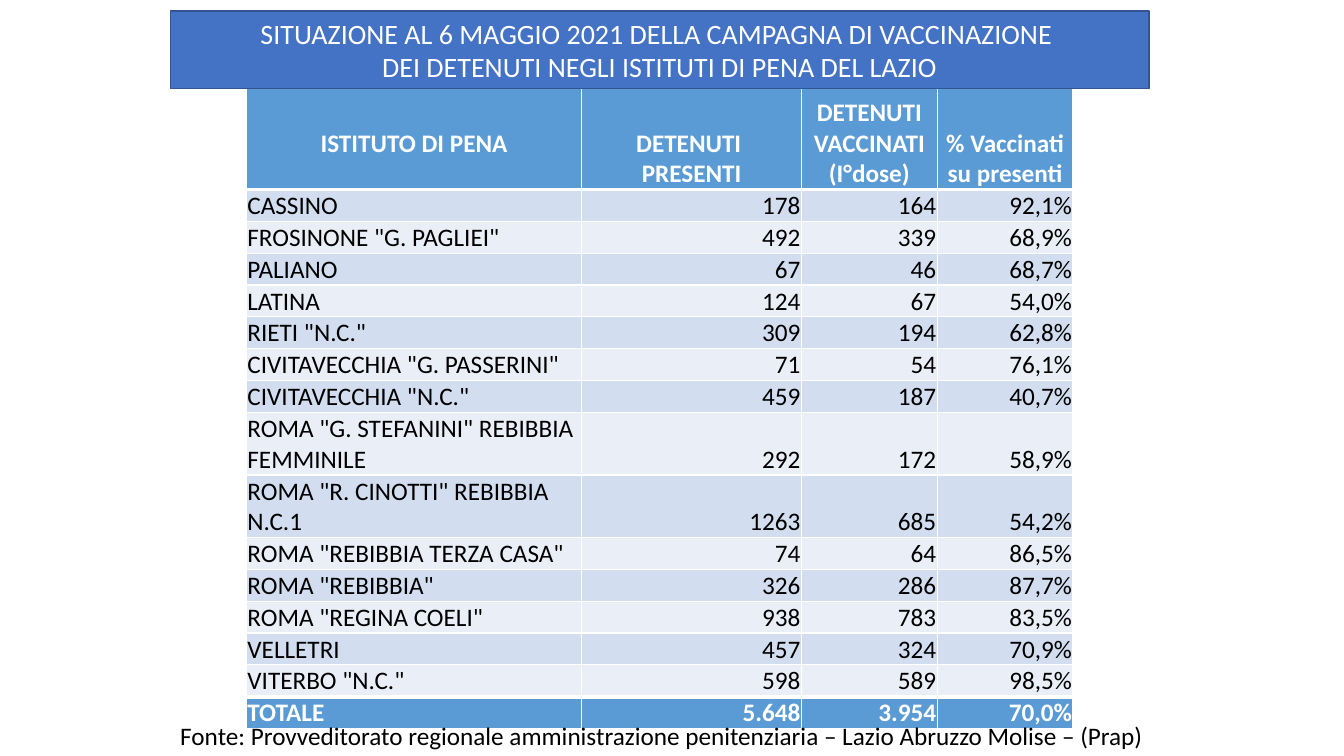
"""Build the slide on the vaccination of detainees in the prisons of Lazio."""
import dataclasses

import lxml.etree
import pptx
import pptx.dml.color
import pptx.enum.shapes
import pptx.enum.text
import pptx.oxml.ns
import pptx.util

Pt = pptx.util.Pt
ALIGN = pptx.enum.text.PP_ALIGN
ANCHOR = pptx.enum.text.MSO_ANCHOR

COLORS = {
    "title": "4472C4",
    "title_line": "325491",
    "header": "5B9BD5",
    "odd": "D2DEEF",
    "even": "EAEFF7",
    "white": "FFFFFF",
    "black": "000000",
}
FONT = "Calibri"
COLUMN_WIDTHS = (239.5, 157, 97, 97)
HEADER_HEIGHT = 72
ROW_HEIGHT = 14.4
LINE_HEIGHT = 22
CELL_MARGIN = 0.75
THIN, THICK = 1, 3


@dataclasses.dataclass
class Prison:
    name: str
    present: str
    vaccinated: str
    share: str


@dataclasses.dataclass
class CellStyle:
    fill: str
    color: str
    bold: bool
    top: float = THIN
    bottom: float = THIN


HEADINGS = ("ISTITUTO DI PENA", "DETENUTI \nPRESENTI",
            "DETENUTI VACCINATI (I°dose)", "% Vaccinati su presenti")
PRISONS = [
    Prison("CASSINO", "178", "164", "92,1%"),
    Prison('FROSINONE "G. PAGLIEI"', "492", "339", "68,9%"),
    Prison("PALIANO", "67", "46", "68,7%"),
    Prison("LATINA", "124", "67", "54,0%"),
    Prison('RIETI "N.C."', "309", "194", "62,8%"),
    Prison('CIVITAVECCHIA "G. PASSERINI"', "71", "54", "76,1%"),
    Prison('CIVITAVECCHIA "N.C."', "459", "187", "40,7%"),
    Prison('ROMA "G. STEFANINI" REBIBBIA FEMMINILE', "292", "172", "58,9%"),
    Prison('ROMA "R. CINOTTI" REBIBBIA N.C.1', "1263", "685", "54,2%"),
    Prison('ROMA "REBIBBIA TERZA CASA"', "74", "64", "86,5%"),
    Prison('ROMA "REBIBBIA"', "326", "286", "87,7%"),
    Prison('ROMA "REGINA COELI"', "938", "783", "83,5%"),
    Prison("VELLETRI", "457", "324", "70,9%"),
    Prison('VITERBO "N.C."', "598", "589", "98,5%"),
]
TOTAL = Prison("TOTALE", "5.648", "3.954", "70,0%")


def rgb(name: str) -> pptx.dml.color.RGBColor:
    return pptx.dml.color.RGBColor.from_string(COLORS[name])


def write(frame, text: str, size: float, color: str, align, bold: bool = False) -> None:
    frame.text = text
    for para in frame.paragraphs:
        para.alignment = align
        for span in para.runs:
            span.font.name = FONT
            span.font.size = Pt(size)
            span.font.bold = bold
            span.font.color.rgb = rgb(color)


def add_borders(cell, top: float, bottom: float) -> None:
    properties = cell._tc.get_or_add_tcPr()
    sides = {"lnL": THIN, "lnR": THIN, "lnT": top, "lnB": bottom}
    for position, (side, width) in enumerate(sides.items()):
        line = lxml.etree.Element(pptx.oxml.ns.qn(f"a:{side}"), w=str(Pt(width)))
        fill = lxml.etree.SubElement(line, pptx.oxml.ns.qn("a:solidFill"))
        lxml.etree.SubElement(fill, pptx.oxml.ns.qn("a:srgbClr"), val=COLORS["white"])
        properties.insert(position, line)


def fill_cell(cell, text: str, style: CellStyle, align) -> None:
    write(cell.text_frame, text, 18, style.color, align, style.bold)
    cell.vertical_anchor = ANCHOR.BOTTOM
    cell.margin_left = cell.margin_right = cell.margin_top = Pt(CELL_MARGIN)
    cell.margin_bottom = 0
    cell.fill.solid()
    cell.fill.fore_color.rgb = rgb(style.fill)
    add_borders(cell, style.top, style.bottom)


def add_prison_table(page) -> None:
    rows = [(HEADINGS, CellStyle("header", "white", True, bottom=THICK))]
    for index, prison in enumerate(PRISONS):
        style = CellStyle("even" if index % 2 else "odd", "black", False)
        rows.append((dataclasses.astuple(prison), style))
    rows[1][1].top = rows[-1][1].bottom = THICK
    rows.append((dataclasses.astuple(TOTAL), CellStyle("header", "white", True, top=THICK)))

    height = HEADER_HEIGHT + ROW_HEIGHT * (len(rows) - 1)
    table = page.shapes.add_table(
        len(rows), len(COLUMN_WIDTHS), Pt(176), Pt(63.4),
        Pt(sum(COLUMN_WIDTHS)), Pt(height)).table
    table.first_row = table.horz_banding = False
    for column, width in zip(table.columns, COLUMN_WIDTHS):
        column.width = Pt(width)
    for row_index, (texts, style) in enumerate(rows):
        table.rows[row_index].height = Pt(ROW_HEIGHT if row_index else HEADER_HEIGHT)
        for column_index, text in enumerate(texts):
            if row_index == 0:
                align = ALIGN.CENTER
            else:
                align = ALIGN.RIGHT if column_index else ALIGN.LEFT
            fill_cell(table.cell(row_index, column_index), text, style, align)
    table.cell(0, 0).margin_bottom = Pt(LINE_HEIGHT)


def add_title(page) -> None:
    box = page.shapes.add_shape(
        pptx.enum.shapes.MSO_SHAPE.RECTANGLE, Pt(121.7), Pt(7.9), Pt(699), Pt(55.5))
    box.shadow.inherit = False
    box.fill.solid()
    box.fill.fore_color.rgb = rgb("title")
    box.line.color.rgb = rgb("title_line")
    box.line.width = Pt(1)
    box.text_frame.word_wrap = True
    box.text_frame.vertical_anchor = ANCHOR.MIDDLE
    write(box.text_frame,
          "SITUAZIONE AL 6 MAGGIO 2021 DELLA CAMPAGNA DI VACCINAZIONE \n"
          "DEI DETENUTI NEGLI ISTITUTI DI PENA DEL LAZIO",
          20, "white", ALIGN.CENTER)


def add_credit(page) -> None:
    box = page.shapes.add_textbox(Pt(121.7), Pt(511), Pt(714), Pt(29))
    box.text_frame.word_wrap = False
    box.text_frame.auto_size = pptx.enum.text.MSO_AUTO_SIZE.SHAPE_TO_FIT_TEXT
    write(box.text_frame,
          "Fonte: Provveditorato regionale amministrazione penitenziaria"
          " – Lazio Abruzzo Molise – (Prap)",
          18, "black", ALIGN.LEFT)


def main() -> None:
    deck = pptx.Presentation()
    deck.slide_width, deck.slide_height = Pt(960), Pt(540)
    page = deck.slides.add_slide(deck.slide_layouts[6])
    add_prison_table(page)
    add_title(page)
    add_credit(page)
    deck.save("out.pptx")


if __name__ == "__main__":
    main()
